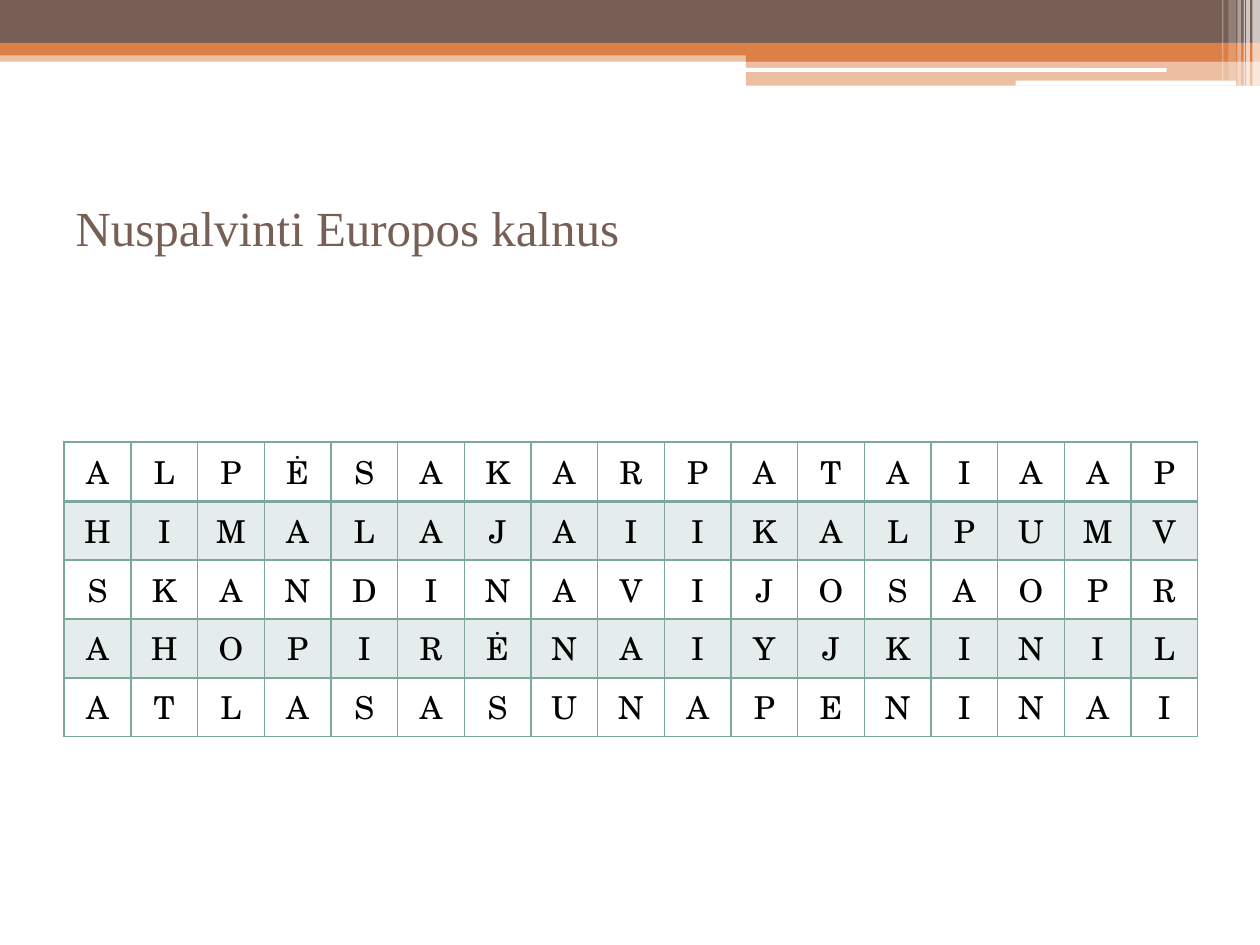
from dataclasses import dataclass

from pptx import Presentation
from pptx.dml.color import RGBColor as RGB
from pptx.enum.shapes import MSO_SHAPE as SHAPE
from pptx.enum.text import MSO_ANCHOR as ANCHOR, MSO_AUTO_SIZE as AUTO, PP_ALIGN as ALIGN
from pptx.oxml.ns import qn
from pptx.util import Inches, Pt
from lxml.etree import SubElement


@dataclass(frozen=True)
class Theme:
    brown: str = "775F55"
    orange: str = "DD8047"
    green: str = "7BA79D"
    white: str = "FFFFFF"
    black: str = "000000"
    title_font: str = "Times New Roman"
    grid_font: str = "TeX Gyre Schola"
    title_size: int = 28
    grid_size: int = 18


def write(tf, text, font, size, color, align=ALIGN.LEFT):
    p = tf.paragraphs[0]
    p.alignment = align
    r = p.add_run()
    r.text = text
    r.font.name = font
    r.font.size = Pt(size)
    r.font.bold = False
    r.font.color.rgb = RGB.from_string(color)


def paint(fill, props, color, opacity=100):
    fill.solid()
    fill.fore_color.rgb = RGB.from_string(color)
    if opacity < 100:
        clr = props.find(qn("a:solidFill")).find(qn("a:srgbClr"))
        SubElement(clr, qn("a:alpha"), val=str(opacity * 1000))


def border(props, side, color, width):
    ln = SubElement(props, qn(f"a:ln{side}"), w=str(Pt(width)))
    SubElement(SubElement(ln, qn("a:solidFill")), qn("a:srgbClr"), val=color)


class SlideBuilder:
    def __init__(self, slide, theme):
        self.slide = slide
        self.theme = theme

    def bar(self, x, y, w, h, color, opacity=100, kind=SHAPE.RECTANGLE):
        sp = self.slide.shapes.add_shape(kind, Inches(x), Inches(y), Inches(w), Inches(h))
        sp.shadow.inherit = False
        sp.line.fill.background()
        paint(sp.fill, sp.element.spPr, color, opacity)

    def title(self, text, x, y, w, h):
        sp = self.slide.shapes.title
        sp.left, sp.top, sp.width, sp.height = Inches(x), Inches(y), Inches(w), Inches(h)
        tf = sp.text_frame
        tf.word_wrap = True
        tf.auto_size = AUTO.NONE
        tf.vertical_anchor = ANCHOR.MIDDLE
        tf.margin_bottom = Inches(0.5)
        t = self.theme
        write(tf, text, t.title_font, t.title_size, t.brown)

    def letter_grid(self, words, x, y, w, row_h):
        t = self.theme
        cols = len(words[0])
        table = self.slide.shapes.add_table(
            len(words), cols, Inches(x), Inches(y), Inches(w), Inches(row_h * len(words))).table
        table.first_row = table.horz_banding = False
        for col in table.columns:
            col.width = Inches(w / cols)
        for i, word in enumerate(words):
            table.rows[i].height = Inches(row_h)
            for j, letter in enumerate(word):
                cell = table.cell(i, j)
                write(cell.text_frame, letter, t.grid_font, t.grid_size, t.black, ALIGN.CENTER)
                props = cell._tc.get_or_add_tcPr()
                for side in "LRTB":
                    thick = (i, side) in ((0, "B"), (1, "T"))
                    border(props, side, t.green, 2 if thick else 1)
                if i % 2:
                    paint(cell.fill, props, t.green, 20)
                else:
                    cell.fill.background()


def main():
    prs = Presentation()
    prs.slide_width, prs.slide_height = Inches(10), Inches(7.5)
    t = Theme()
    s = SlideBuilder(prs.slides.add_slide(prs.slide_layouts[5]), t)

    s.bar(0, 0.4, 10, 0.09, t.orange, 50)
    s.bar(0, 0, 10, 0.34, t.brown)
    s.bar(0, 0.34, 10, 0.1, t.orange)
    s.bar(5.92, 0.39, 4.08, 0.1, t.orange)
    s.bar(5.92, 0.48, 4.08, 0.2, t.orange, 50)
    s.bar(5.91, 0.54, 3.35, 0.03, t.white, kind=SHAPE.ROUNDED_RECTANGLE)
    s.bar(8.06, 0.64, 1.75, 0.04, t.white, kind=SHAPE.ROUNDED_RECTANGLE)
    for x, w, h, opacity in (
        (9.94, 0.06, 0.68, 65),
        (9.89, 0.03, 0.68, 65),
        (9.87, 0.01, 0.68, 60),
        (9.82, 0.03, 0.68, 40),
        (9.75, 0.06, 0.64, 20),
        (9.7, 0.01, 0.64, 30),
    ):
        s.bar(x, 0, w, h, t.white, opacity)

    s.title("Nuspalvinti Europos kalnus", 0.5, 1.25, 9, 1.56)
    s.letter_grid((
        "ALPĖSAKARPATAIAAP",
        "HIMALAJAIIKALPUMV",
        "SKANDINAVIJOSAOPR",
        "AHOPIRĖNAIYJKINIL",
        "ATLASASUNAPENINAI",
    ), 0.51, 3.51, 9, 0.41)
    prs.save("out.pptx")


if __name__ == "__main__":
    main()
